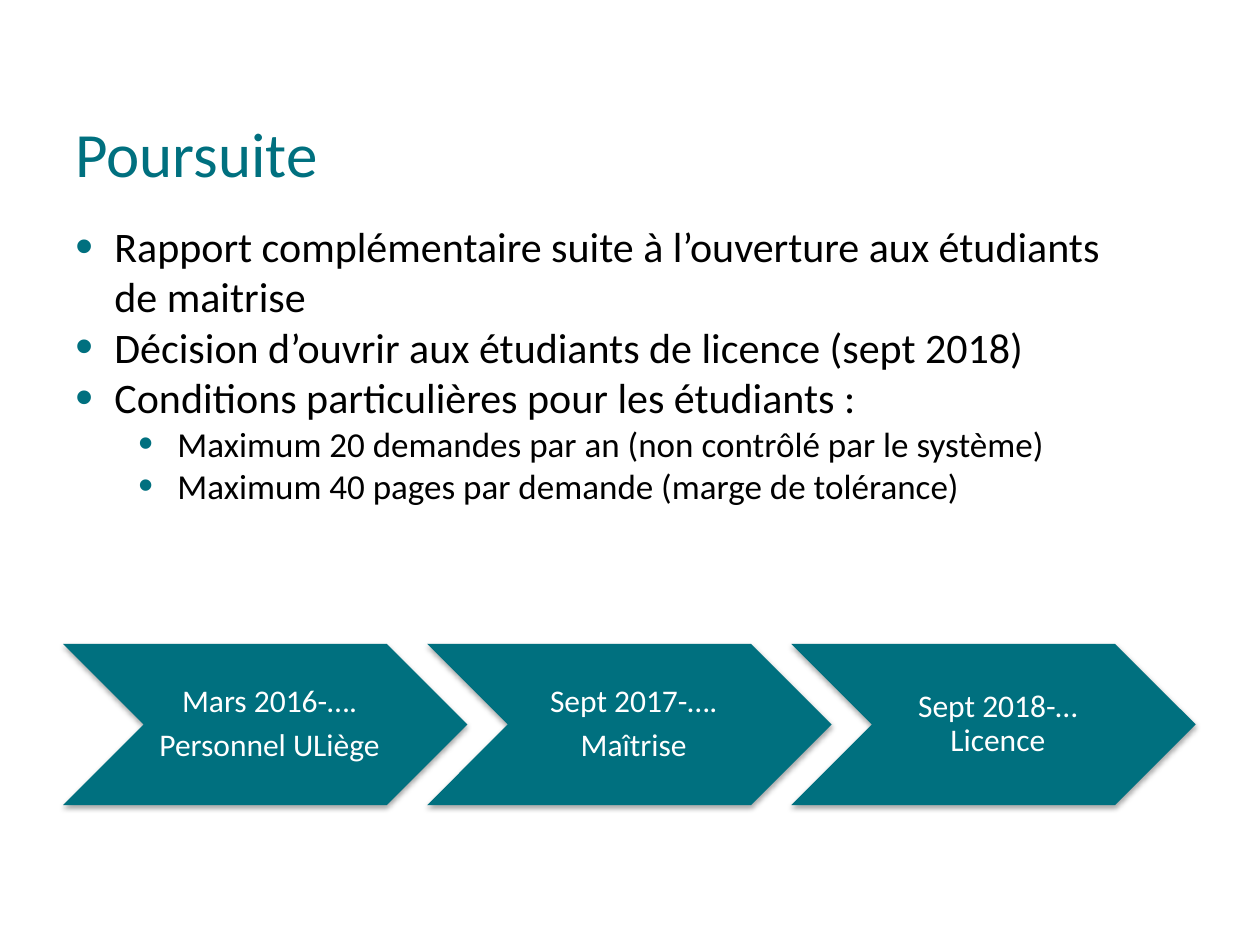
from typing import NamedTuple

from lxml import etree
from pptx import Presentation
from pptx.dml.color import RGBColor
from pptx.enum.shapes import MSO_SHAPE as Shape
from pptx.enum.text import MSO_ANCHOR as Anchor, PP_ALIGN as Align
from pptx.oxml.ns import qn
from pptx.util import Inches, Pt

TEAL, BLACK, WHITE = "00707F", "000000", "FFFFFF"
FONT = "Calibri"


class Point(NamedTuple):
    text: str
    level: int = 0


class Step(NamedTuple):
    lines: tuple[str, ...]


POINTS = [
    Point("Rapport complémentaire suite à l’ouverture aux étudiants de maitrise"),
    Point("Décision d’ouvrir aux étudiants de licence (sept 2018)"),
    Point("Conditions particulières pour les étudiants :"),
    Point("Maximum 20 demandes par an (non contrôlé par le système)", 1),
    Point("Maximum 40 pages par demande (marge de tolérance)", 1),
]
STEPS = [
    Step(("Mars 2016-….", "Personnel ULiège")),
    Step(("Sept 2017-….", "Maîtrise")),
    Step(("Sept 2018-… Licence",)),
]


def paint(target, color: str) -> None:
    """Set the solid colour of a fill or a font."""
    if hasattr(target, "solid"):
        target.solid()
        target.fore_color.rgb = RGBColor.from_string(color)
    else:
        target.color.rgb = RGBColor.from_string(color)


def style(para, size: int, color: str) -> None:
    for run in para.runs:
        run.font.name = FONT
        run.font.size = Pt(size)
        paint(run.font, color)


def add_box(slide, left: float, top: float, width: float, height: float):
    box = slide.shapes.add_textbox(
        Inches(left), Inches(top), Inches(width), Inches(height))
    box.text_frame.word_wrap = True
    return box.text_frame


def add_paras(frame, texts: list[str]):
    """Fill the frame with one paragraph for each text."""
    frame.text = "\n".join(texts)
    return frame.paragraphs


def add_bullet(para, level: int) -> None:
    props = para._p.get_or_add_pPr()
    props.set("marL", str(Inches(0.31 + 0.5 * level)))
    props.set("indent", str(Inches(-0.31)))
    color = etree.SubElement(props, qn("a:buClr"))
    etree.SubElement(color, qn("a:srgbClr"), val=TEAL)
    etree.SubElement(props, qn("a:buSzPct"), val="120000")
    etree.SubElement(props, qn("a:buFont"), typeface="Arial")
    etree.SubElement(props, qn("a:buChar"), char="•")


def add_shadow(shape) -> None:
    """Give the shape a soft shadow straight below it."""
    shape.shadow.inherit = False
    effects = shape._element.spPr.find(qn("a:effectLst"))
    outer = etree.SubElement(
        effects, qn("a:outerShdw"), blurRad=str(Pt(3.1)),
        dist=str(Pt(1.8)), dir="5400000", rotWithShape="0")
    color = etree.SubElement(outer, qn("a:srgbClr"), val=BLACK)
    etree.SubElement(color, qn("a:alpha"), val="35000")


def add_step(slide, step: Step, left: float) -> None:
    top, height = 5.11, 1.28
    arrow = slide.shapes.add_shape(
        Shape.CHEVRON, Inches(left), Inches(top), Inches(3.21), Inches(height))
    paint(arrow.fill, TEAL)
    arrow.line.fill.background()
    add_shadow(arrow)

    frame = add_box(slide, left + 0.65, top, 1.93, height)
    frame.vertical_anchor = Anchor.MIDDLE
    frame.margin_left = Inches(0.08)
    frame.margin_right = frame.margin_top = frame.margin_bottom = Inches(0.03)
    for para in add_paras(frame, step.lines):
        para.alignment = Align.CENTER
        para.line_spacing = 0.9
        para.space_after = Pt(6)
        style(para, 18, WHITE)


def main() -> None:
    deck = Presentation()
    deck.slide_width, deck.slide_height = Inches(10), Inches(7.5)
    slide = deck.slides.add_slide(deck.slide_layouts[6])

    title = add_box(slide, 0.5, 0.87, 9, 0.68)
    title.vertical_anchor = Anchor.MIDDLE
    title.text = "Poursuite"
    style(title.paragraphs[0], 36, TEAL)

    for index, step in enumerate(STEPS):
        add_step(slide, step, 0.5 + 2.89 * index)

    body = add_box(slide, 0.5, 1.7, 8.58, 2.79)
    paras = add_paras(body, [point.text for point in POINTS])
    for para, point in zip(paras, POINTS):
        para.level = point.level
        add_bullet(para, point.level)
        style(para, 20 if point.level else 24, BLACK)

    deck.save("out.pptx")


if __name__ == "__main__":
    main()
